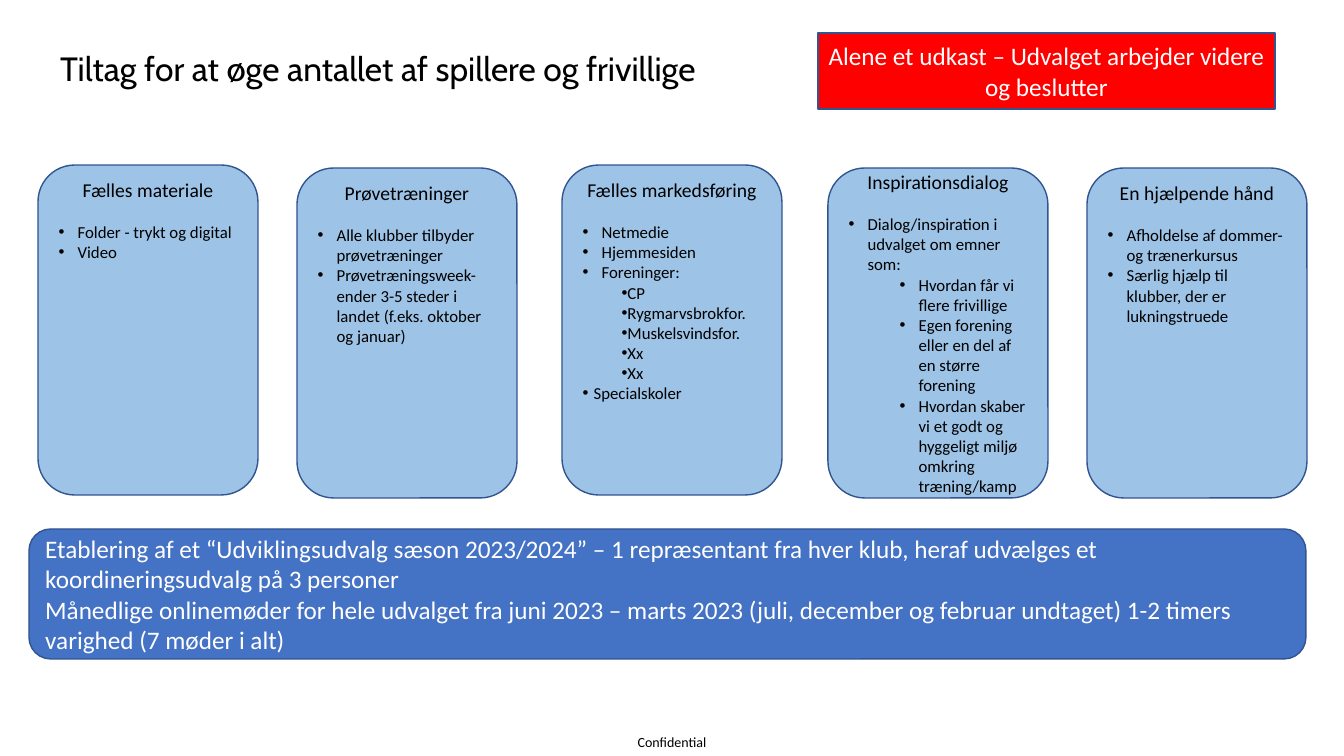
"""Build the slide on initiatives for more players and volunteers."""
from dataclasses import dataclass

from lxml.etree import SubElement
from pptx import Presentation
from pptx.dml.color import RGBColor
from pptx.enum.shapes import MSO_SHAPE
from pptx.enum.text import MSO_ANCHOR, MSO_AUTO_SIZE, PP_ALIGN
from pptx.oxml.ns import qn
from pptx.util import Pt


@dataclass(frozen=True)
class Theme:
    """Colours, fonts and type sizes in points."""
    black: str = "000000"
    white: str = "FFFFFF"
    card: str = "9DC3E6"
    banner: str = "4472C4"
    alert: str = "FF0000"
    outline: str = "325491"
    title_font: str = "Cabin"
    body_font: str = "Calibri"
    title: int = 24
    statement: int = 18
    heading: int = 14
    item: int = 12
    footer: int = 10


@dataclass(frozen=True)
class Box:
    """A rectangle in px."""
    left: int
    top: int
    width: int
    height: int


THEME = Theme()
CARD_WIDTH, CARD_HEIGHT = 220, 330
HEADING_INSET = 2
HEADING_GAP = 14.65
MAIN, SUB, CLOSE_SUB, TIGHT = (0, 19, -19), (1, 70, -19), (1, 30, 9), (0, 11, -11)

CARDS = [
    (38, 165, MSO_ANCHOR.TOP, "Fælles materiale", [
        (MAIN, ["Folder - trykt og digital", "Video"])]),
    (297, 168, MSO_ANCHOR.TOP, "Prøvetræninger", [
        (MAIN, ["Alle klubber tilbyder prøvetræninger",
                "Prøvetræningsweek-ender 3-5 steder i landet (f.eks. oktober og januar)"])]),
    (562, 165, MSO_ANCHOR.TOP, "Fælles markedsføring", [
        (MAIN, ["Netmedie", "Hjemmesiden", "Foreninger:"]),
        (CLOSE_SUB, ["CP", "Rygmarvsbrokfor.", "Muskelsvindsfor.", "Xx", "Xx"]),
        (TIGHT, ["Specialskoler"])]),
    (828, 168, MSO_ANCHOR.MIDDLE, "Inspirationsdialog", [
        (MAIN, ["Dialog/inspiration i udvalget om emner som:"]),
        (SUB, ["Hvordan får vi flere frivillige",
               "Egen forening eller en del af en større forening",
               "Hvordan skaber vi et godt og hyggeligt miljø omkring træning/kamp"])]),
    (1087, 168, MSO_ANCHOR.TOP, "En hjælpende hånd", [
        (MAIN, ["Afholdelse af dommer- og trænerkursus",
                "Særlig hjælp til klubber, der er lukningstruede"])]),
]
BANNER_LINES = [
    "Etablering af et “Udviklingsudvalg sæson 2023/2024” – 1 repræsentant fra hver klub, "
    "heraf udvælges et koordineringsudvalg på 3 personer",
    "Månedlige onlinemøder for hele udvalget fra juni 2023 – marts 2023 "
    "(juli, december og februar undtaget) 1-2 timers varighed (7 møder i alt)",
]


def px(length):
    """Turn px into EMU."""
    return round(length * 914400 / 100.8)


def place(shape, box):
    """Move a shape to a box."""
    shape.left, shape.top = px(box.left), px(box.top)
    shape.width, shape.height = px(box.width), px(box.height)


def write(para, text, size, colour, align=PP_ALIGN.LEFT, font=THEME.body_font):
    """Fill a paragraph with formatted text."""
    para.text = text
    para.alignment = align
    for span in para.runs:
        span.font.size = Pt(size)
        span.font.name = font
        span.font.color.rgb = RGBColor.from_string(colour)


def add_bullet(para, style):
    """Give a paragraph a level, an indent and a bullet."""
    level, margin, indent = style
    para.level = level
    properties = para._p.get_or_add_pPr()
    properties.set("marL", str(px(margin)))
    properties.set("indent", str(px(indent)))
    SubElement(properties, qn("a:buFont")).set("typeface", "Arial")
    SubElement(properties, qn("a:buChar")).set("char", "•")


def add_panel(page, preset, box, fill):
    """Add an outlined panel and return its text frame."""
    panel = page.shapes.add_shape(preset, 0, 0, 0, 0)
    place(panel, box)
    panel.shadow.inherit = False
    panel.fill.solid()
    panel.fill.fore_color.rgb = RGBColor.from_string(fill)
    panel.line.color.rgb = RGBColor.from_string(THEME.outline)
    panel.line.width = Pt(1)
    frame = panel.text_frame
    frame.word_wrap = True
    frame.vertical_anchor = MSO_ANCHOR.MIDDLE
    return frame


def add_title(page, box):
    """Fill the title placeholder."""
    title = page.shapes.title
    place(title, box)
    frame = title.text_frame
    frame.auto_size = MSO_AUTO_SIZE.NONE
    frame.vertical_anchor = MSO_ANCHOR.MIDDLE
    para = frame.paragraphs[0]
    write(para, "Tiltag for at øge antallet af spillere og frivillige",
          THEME.title, THEME.black, font=THEME.title_font)
    para.line_spacing = 0.9


def add_card(page, box, anchor, heading, groups):
    """Add a card with a heading and grouped bullets."""
    frame = add_panel(page, MSO_SHAPE.ROUNDED_RECTANGLE, box, THEME.card)
    frame.vertical_anchor = anchor
    if anchor == MSO_ANCHOR.TOP:
        frame.margin_top = px(HEADING_INSET)
    para = frame.paragraphs[0]
    write(para, heading, THEME.heading, THEME.black, PP_ALIGN.CENTER)
    para.space_after = Pt(HEADING_GAP)
    for style, items in groups:
        for item in items:
            para = frame.add_paragraph()
            write(para, item, THEME.item, THEME.black)
            add_bullet(para, style)


def add_draft_note(page, box):
    """Add the red draft note."""
    frame = add_panel(page, MSO_SHAPE.RECTANGLE, box, THEME.alert)
    write(frame.paragraphs[0], "Alene et udkast – Udvalget arbejder videre og beslutter",
          THEME.statement, THEME.white, PP_ALIGN.CENTER)


def add_banner(page, box):
    """Add the banner about the committee."""
    frame = add_panel(page, MSO_SHAPE.ROUNDED_RECTANGLE, box, THEME.banner)
    frame.text = "\n".join(BANNER_LINES)
    for para, line in zip(frame.paragraphs, BANNER_LINES):
        write(para, line, THEME.statement, THEME.white)


def add_footer(page, box):
    """Add the confidentiality label."""
    label = page.shapes.add_textbox(0, 0, 0, 0)
    place(label, box)
    frame = label.text_frame
    frame.word_wrap = True
    frame.vertical_anchor = MSO_ANCHOR.MIDDLE
    frame.margin_left = frame.margin_right = frame.margin_top = frame.margin_bottom = 0
    write(frame.paragraphs[0], "Confidential", THEME.footer, THEME.black, PP_ALIGN.CENTER)


def main():
    """Build and save the deck."""
    deck = Presentation()
    deck.slide_width, deck.slide_height = px(1344), px(756)
    page = deck.slides.add_slide(deck.slide_layouts[5])
    add_title(page, Box(50, 41, 1159, 60))
    for left, top, anchor, heading, groups in CARDS:
        add_card(page, Box(left, top, CARD_WIDTH, CARD_HEIGHT), anchor, heading, groups)
    add_banner(page, Box(29, 529, 1277, 130))
    add_draft_note(page, Box(818, 33, 457, 76))
    add_footer(page, Box(622, 727, 100, 29))
    deck.save("out.pptx")


if __name__ == "__main__":
    main()
